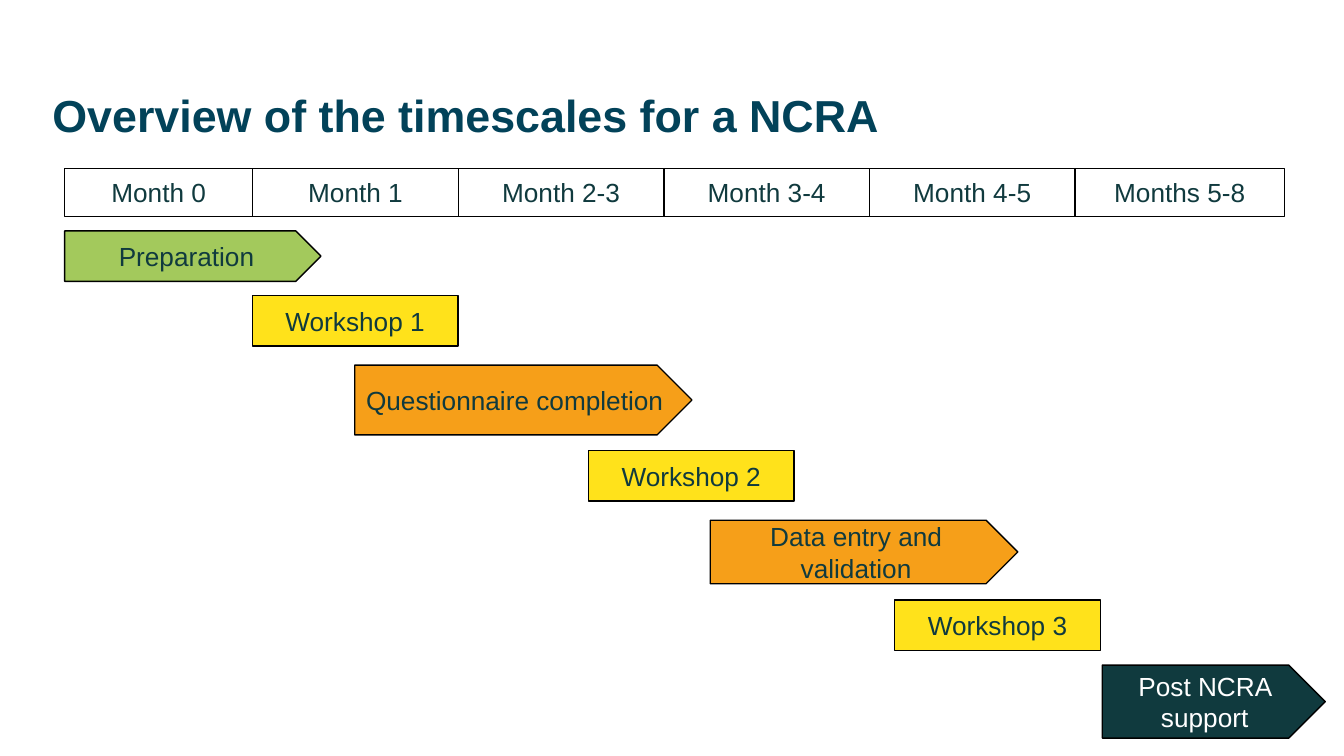
"""Build a slide showing the timescales of an NCRA as a stepped timeline."""
from pptx import Presentation
from pptx.dml.color import RGBColor
from pptx.enum.shapes import MSO_SHAPE
from pptx.enum.text import MSO_ANCHOR, MSO_AUTO_SIZE, PP_ALIGN
from pptx.util import Cm, Pt

TITLE = "Overview of the timescales for a NCRA"
WHITE, BLACK, NAVY, TEAL = "FFFFFF", "000000", "024259", "103A3E"
GREEN, YELLOW, ORANGE = "A3C95C", "FFE21B", "F69F19"

MONTH_LEFT, MONTH_TOP, MONTH_HEIGHT = 1.63, 4.24, 1.21
MONTHS = [
    ("Month 0", 4.74),
    ("Month 1", 5.18),
    ("Month 2-3", 5.18),
    ("Month 3-4", 5.18),
    ("Month 4-5", 5.18),
    ("Months 5-8", 5.28),
]

WORKSHOP_WIDTH, WORKSHOP_HEIGHT = 5.18, 1.27
WORKSHOPS = [
    ("Workshop 1", 6.36, 7.45),
    ("Workshop 2", 14.83, 11.36),
    ("Workshop 3", 22.55, 15.12),
]

PHASES = [
    ("Preparation", 1.63, 5.82, 6.46, 1.27, GREEN, TEAL),
    ("Questionnaire completion", 8.94, 9.2, 8.5, 1.76, ORANGE, TEAL),
    ("Data entry and validation", 17.9, 13.11, 7.75, 1.6, ORANGE, TEAL),
    ("Post NCRA support", 27.78, 16.76, 5.62, 1.84, TEAL, WHITE),
]


def rgb(value):
    return RGBColor.from_string(value)


def add_box(s, kind, text, left, top, width, height, fill, color=TEAL):
    sp = s.shapes.add_shape(kind, Cm(left), Cm(top), Cm(width), Cm(height))
    sp.shadow.inherit = False
    sp.fill.solid()
    sp.fill.fore_color.rgb = rgb(fill)
    sp.line.color.rgb = rgb(BLACK)
    sp.line.width = Pt(1)
    tf = sp.text_frame
    tf.word_wrap = True
    tf.vertical_anchor = MSO_ANCHOR.MIDDLE
    p = tf.paragraphs[0]
    p.text = text
    p.alignment = PP_ALIGN.CENTER
    set_font(p, 18.7, color)


def set_font(p, size, color, bold=False):
    p.font.name = "Arial"
    p.font.size = Pt(size)
    p.font.bold = bold
    p.font.color.rgb = rgb(color)


def add_title(s):
    sp = s.shapes.title
    sp.left, sp.top, sp.width, sp.height = Cm(1.32), Cm(2.13), Cm(30.3), Cm(1.68)
    tf = sp.text_frame
    tf.margin_left = tf.margin_right = tf.margin_top = tf.margin_bottom = 0
    tf.auto_size = MSO_AUTO_SIZE.NONE
    tf.word_wrap = True
    tf.vertical_anchor = MSO_ANCHOR.MIDDLE
    p = tf.paragraphs[0]
    p.text = TITLE
    p.alignment = PP_ALIGN.LEFT
    p.line_spacing = 0.9
    set_font(p, 32, NAVY, bold=True)


def main():
    prs = Presentation()
    prs.slide_width, prs.slide_height = Cm(33.87), Cm(19.05)
    s = prs.slides.add_slide(prs.slide_layouts[5])
    add_title(s)

    left = MONTH_LEFT
    for text, width in MONTHS:
        add_box(s, MSO_SHAPE.RECTANGLE, text, left, MONTH_TOP, width, MONTH_HEIGHT, WHITE)
        left += width
    for text, left, top in WORKSHOPS:
        add_box(s, MSO_SHAPE.RECTANGLE, text, left, top, WORKSHOP_WIDTH, WORKSHOP_HEIGHT, YELLOW)
    for phase in PHASES:
        add_box(s, MSO_SHAPE.PENTAGON, *phase)

    prs.save("out.pptx")


if __name__ == "__main__":
    main()
